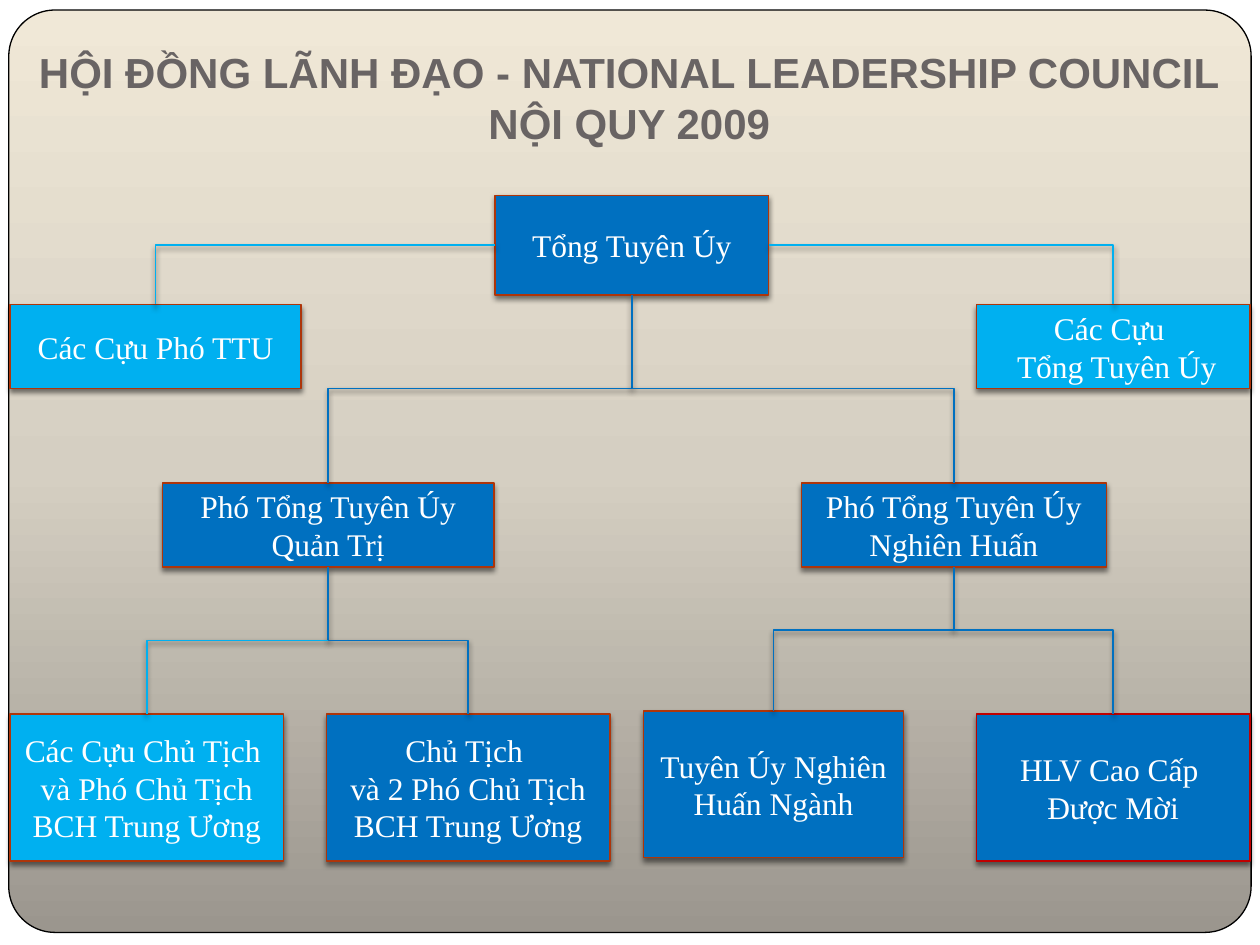
from copy import deepcopy

from lxml import etree
from pptx import Presentation
from pptx.dml.color import RGBColor
from pptx.enum.shapes import MSO_CONNECTOR, MSO_SHAPE
from pptx.enum.text import MSO_ANCHOR, MSO_AUTO_SIZE, PP_ALIGN
from pptx.oxml.ns import qn
from pptx.util import Inches, Pt

STRAIGHT, ELBOW = MSO_CONNECTOR.STRAIGHT, MSO_CONNECTOR.ELBOW
PROCESS, ROUNDED = MSO_SHAPE.FLOWCHART_PROCESS, MSO_SHAPE.ROUNDED_RECTANGLE
MIDDLE, BOTTOM = MSO_ANCHOR.MIDDLE, MSO_ANCHOR.BOTTOM
CENTER = PP_ALIGN.CENTER
NO_AUTOFIT = MSO_AUTO_SIZE.NONE

BLUE, SKY = "0070C0", "00B0F0"
RUST, RED = "AE350A", "C00000"


def rgb(value):
    return RGBColor.from_string(value)


def add_shadow(shape):
    properties = shape._element.spPr
    for old in properties.findall(qn("a:effectLst")):
        properties.remove(old)
    effects = etree.SubElement(properties, qn("a:effectLst"))
    shadow = etree.SubElement(effects, qn("a:outerShdw"), blurRad=str(Pt(3)),
                              dist=str(Pt(2)), dir="5400000", rotWithShape="0")
    color = etree.SubElement(shadow, qn("a:srgbClr"), val="000000")
    etree.SubElement(color, qn("a:alpha"), val="50000")


presentation = Presentation()
presentation.slide_width = Inches(10)
presentation.slide_height = Inches(7.5)
COLUMN = presentation.slide_width / 100
ROW = presentation.slide_height / 90
slide = presentation.slides.add_slide(presentation.slide_layouts[5])
shapes = slide.shapes

# Rounded gradient panel, behind the title
panel = shapes.add_shape(ROUNDED, int(0.7 * COLUMN), int(0.96 * ROW),
                         int(98.6 * COLUMN), int(87.84 * ROW))
panel.adjustments[0] = 0.05
panel.shadow.inherit = False
panel.line.color.rgb = rgb("000000")
panel.line.width = Pt(0.75)
panel.fill.gradient()
panel.fill.gradient_angle = 90
stop_list = panel._element.spPr.find(qn("a:gradFill")).find(qn("a:gsLst"))
stop_list.insert(1, deepcopy(stop_list[0]))
gradient = ((0, "9B968E"), (0.5, "D5CFC2"), (1, "F0E8D7"))
for stop, (position, color) in zip(panel.fill.gradient_stops, gradient):
    stop.position = position
    stop.color.rgb = rgb(color)
shapes._spTree.insert(2, panel._element)

# Title
title = shapes.title
title.left, title.top = int(0.8 * COLUMN), int(ROW)
title.width, title.height = int(98.3 * COLUMN), int(14.25 * ROW)
frame = title.text_frame
frame.text = "HỘI ĐỒNG LÃNH ĐẠO - NATIONAL LEADERSHIP COUNCIL\vNỘI QUY 2009"
frame.auto_size = NO_AUTOFIT
frame.word_wrap = True
frame.vertical_anchor = BOTTOM
frame.margin_bottom = Inches(0.1)
paragraph = frame.paragraphs[0]
paragraph.alignment = CENTER
for run in paragraph.runs:
    run.font.name = "Arial"
    run.font.size = Pt(24)
    run.font.bold = True
    run.font.color.rgb = rgb("696464")

# Boxes: left and top, width and height in grid units, fill, outline, text
boxes = {
    "chief": (39.3, 18.6, 21.7, 9.5, BLUE, RUST, "Tổng Tuyên Úy"),
    "administration": (12.9, 46, 26.3, 8, BLUE, RUST,
                       "Phó Tổng Tuyên Úy\vQuản Trị"),
    "training": (63.6, 46, 24.2, 8, BLUE, RUST,
                 "Phó Tổng Tuyên Úy\vNghiên Huấn"),
    "former chairs": (0.8, 68, 21.7, 14, SKY, RUST,
                      "Các Cựu Chủ Tịch \vvà Phó Chủ Tịch\vBCH Trung Ương"),
    "chairs": (25.9, 68, 22.5, 14, BLUE, RUST,
               "Chủ Tịch \vvà 2 Phó Chủ Tịch\vBCH Trung Ương"),
    "branch training": (51.1, 67.7, 20.6, 14, BLUE, RUST,
                        "Tuyên Úy Nghiên Huấn Ngành"),
    "invited trainers": (77.5, 68, 21.7, 14, BLUE, RED,
                         "HLV Cao Cấp \vĐược Mời"),
    "former chiefs": (77.5, 29, 21.7, 8, SKY, RUST,
                      "Các Cựu \v Tổng Tuyên Úy"),
    "former deputies": (0.8, 29, 23.1, 8, SKY, RUST, "Các Cựu Phó TTU"),
}
nodes = {}
for name, (left, top, width, height, fill, outline, text) in boxes.items():
    node = shapes.add_shape(PROCESS, int(left * COLUMN), int(top * ROW),
                            int(width * COLUMN), int(height * ROW))
    node.fill.solid()
    node.fill.fore_color.rgb = rgb(fill)
    node.line.color.rgb = rgb(outline)
    node.line.width = Pt(0.75)
    add_shadow(node)
    frame = node.text_frame
    frame.text = text
    frame.word_wrap = True
    frame.vertical_anchor = MIDDLE
    paragraph = frame.paragraphs[0]
    paragraph.alignment = CENTER
    for run in paragraph.runs:
        run.font.name = "Times New Roman"
        run.font.size = Pt(18)
        run.font.color.rgb = rgb("FFFFFF")
    nodes[name] = node

# Advisers hang from the sides of the top box
chief = nodes["chief"]
chief_middle = chief.top + chief.height // 2
elbows = [(chief.left, chief_middle, "former deputies"),
          (chief.left + chief.width, chief_middle, "former chiefs")]

# Trunks run down from each parent to the row where its branches part
connectors = []
for parent, branch_row, children in (
        ("chief", 37, ("administration", "training")),
        ("administration", 61, ("former chairs", "chairs")),
        ("training", 60, ("branch training", "invited trainers"))):
    node = nodes[parent]
    center = node.left + node.width // 2
    branch_y = int(branch_row * ROW)
    trunk = shapes.add_connector(STRAIGHT, center, node.top + node.height,
                                 center, branch_y)
    trunk.begin_connect(node, 2)
    connectors.append((trunk, BLUE))
    elbows += [(center, branch_y, child) for child in children]

# Elbows run sideways, then down to the top of the child
for begin_x, begin_y, child in elbows:
    node = nodes[child]
    elbow = shapes.add_connector(ELBOW, begin_x, begin_y,
                                 node.left + node.width // 2, node.top)
    elbow._element.spPr.find(qn("a:prstGeom")).set("prst", "bentConnector2")
    connectors.append((elbow, boxes[child][4]))

for connector, color in connectors:
    connector.line.color.rgb = rgb(color)
    connector.line.width = Pt(1)
    add_shadow(connector)

presentation.save("out.pptx")
